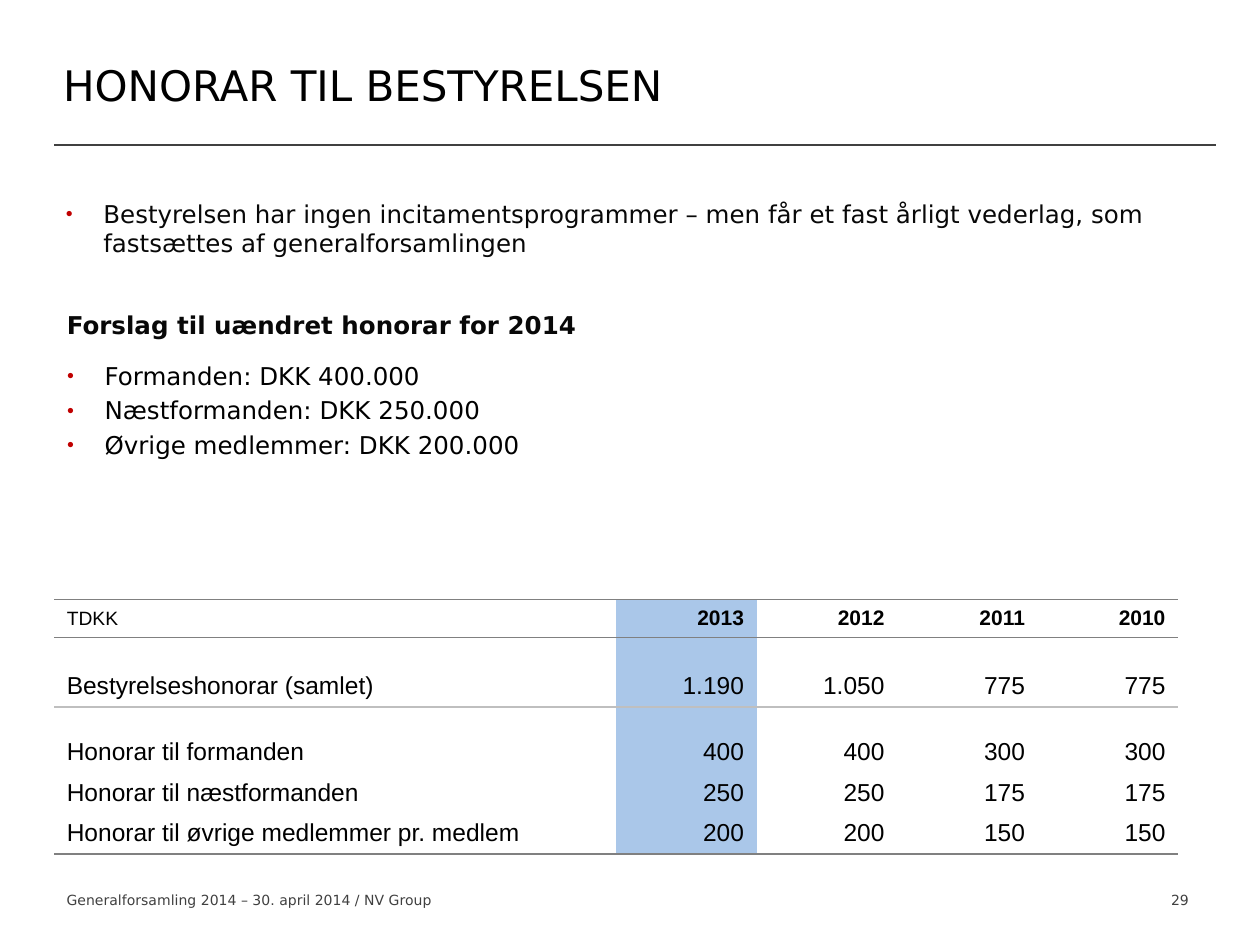
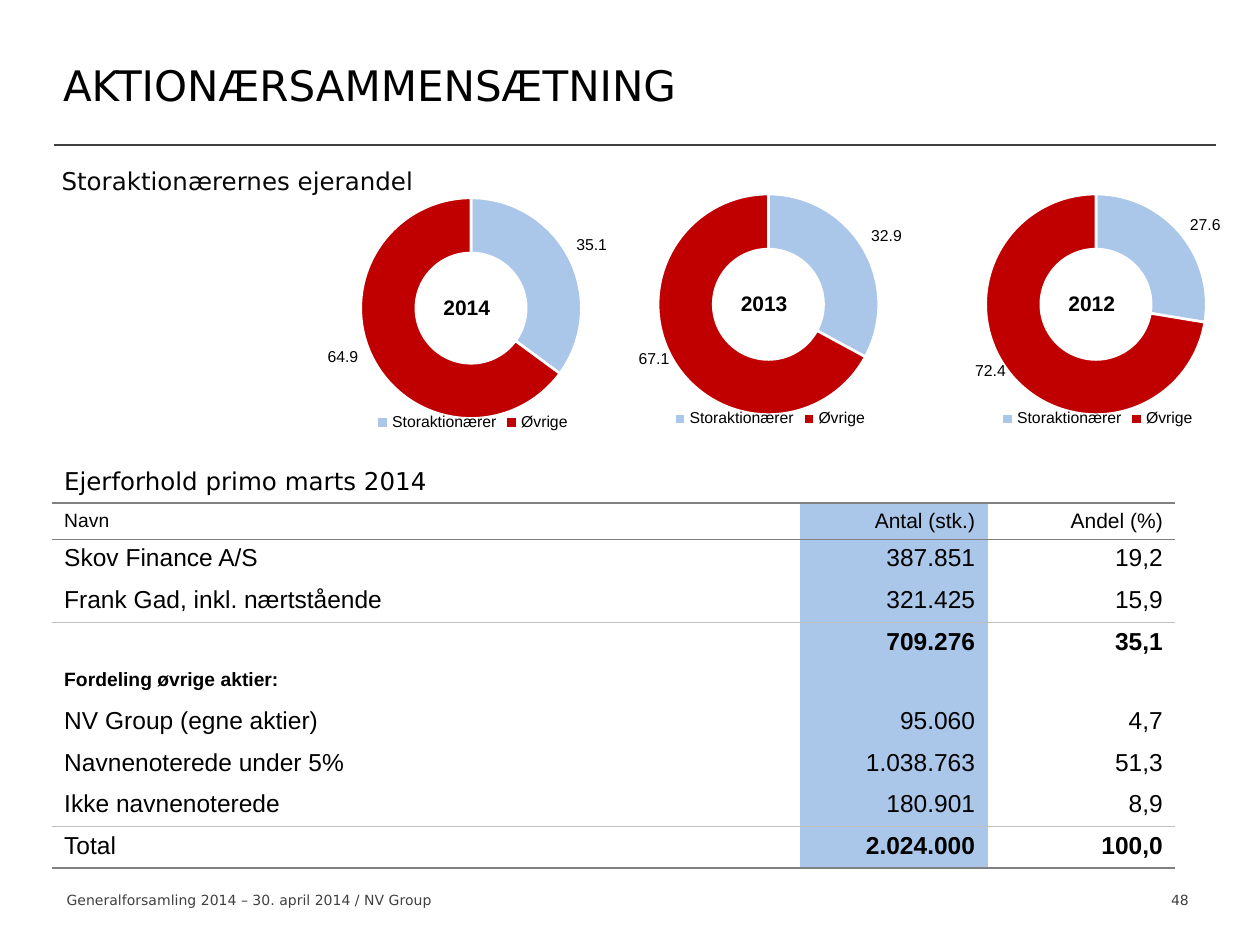
from collections import namedtuple
from math import cos, pi, sin

from lxml import etree
from pptx import Presentation
from pptx.chart.data import CategoryChartData
from pptx.dml.color import RGBColor
from pptx.enum.chart import XL_CHART_TYPE, XL_LEGEND_POSITION
from pptx.enum.shapes import MSO_CONNECTOR
from pptx.enum.text import MSO_ANCHOR, MSO_AUTO_SIZE, PP_ALIGN
from pptx.oxml.ns import qn
from pptx.util import Inches, Pt

DOUGHNUT = XL_CHART_TYPE.DOUGHNUT
LEGEND_BOTTOM = XL_LEGEND_POSITION.BOTTOM
STRAIGHT = MSO_CONNECTOR.STRAIGHT
TOP, MIDDLE = MSO_ANCHOR.TOP, MSO_ANCHOR.MIDDLE
NO_FIT = MSO_AUTO_SIZE.NONE
LEFT, CENTER, RIGHT = PP_ALIGN.LEFT, PP_ALIGN.CENTER, PP_ALIGN.RIGHT

BLACK, INK, GREY, WHITE = "000000", "080808", "404040", "FFFFFF"
RED, BLUE, RULE, SOFT_RULE = "C00000", "AAC7E9", "808080", "BFBFBF"
HEAD_FONT, DATA_FONT = "DejaVu Sans", "Arial"
PLAIN_TABLE = "{2D5ABB26-0587-4C30-8999-92F81FD0307C}"
LAYOUT_TWO_BODIES, LAYOUT_TITLE = 3, 5

COLUMNS, ROWS = 100, 75
CELL_PAD = 0.43
CHART_W, CHART_H = 31.5, 23.4
RING = dict(x=0.22, y=0.055, w=0.556, h=0.75)
RING_RADIUS = 6.6

Row = namedtuple("Row", "height texts label values", defaults=[(14, False), (14, False)])


def grid(units):
    return Inches(units / 10)


def area(*units):
    return [grid(u) for u in units]


def rgb(value):
    return RGBColor.from_string(value)


def style(font, size, color=BLACK, name=HEAD_FONT, bold=False):
    font.size, font.name, font.bold = Pt(size), name, bold
    font.color.rgb = rgb(color)


def write(p, text, align=LEFT, before=0, **font):
    p.alignment = align
    p.space_before = Pt(before)
    r = p.add_run()
    r.text = text
    style(r.font, **font)


def add_label(s, text, at, wrap=True, **format):
    tf = s.shapes.add_textbox(*area(*at)).text_frame
    tf.word_wrap = wrap
    write(tf.paragraphs[0], text, **format)


def set_bullet(p, shown):
    pPr = p._p.get_or_add_pPr()
    indent = grid(3)
    pPr.set("marL", str(indent))
    pPr.set("indent", str(-indent))
    if not shown:
        etree.SubElement(pPr, qn("a:buNone"))
        return
    color = etree.SubElement(pPr, qn("a:buClr"))
    etree.SubElement(color, qn("a:srgbClr"), val=RED)
    etree.SubElement(pPr, qn("a:buSzPct"), val="50000")
    etree.SubElement(pPr, qn("a:buChar"), char="●")


def place(sp, at):
    sp.left, sp.top, sp.width, sp.height = area(*at)
    sp.text_frame.auto_size = NO_FIT
    return sp.text_frame


def fill_body(sp, at, items):
    tf = place(sp, at)
    tf.vertical_anchor = TOP
    for i, (text, bullet, format) in enumerate(items):
        p = tf.add_paragraph() if i else tf.paragraphs[0]
        set_bullet(p, bullet)
        write(p, text, size=14, **format)


def add_slide(prs, layout, title, number):
    s = prs.slides.add_slide(prs.slide_layouts[layout])
    tf = place(s.shapes.title, (4, 1.5, 95, 10.4))
    tf.vertical_anchor = MIDDLE
    write(tf.paragraphs[0], title, size=24)
    line = s.shapes.add_connector(STRAIGHT, *area(4.3, 11.5, 96.5, 11.5))
    line.line.color.rgb = rgb(GREY)
    line.line.width = Pt(1.25)
    etree.SubElement(line._element.spPr, qn("a:effectLst"))
    add_label(s, "Generalforsamling 2014 – 30. april 2014 / NV Group",
              (4.3, 70.3, 40.2, 2.4), size=8, color=GREY)
    add_label(s, str(number), (89.5, 70.3, 8.3, 2.3), align=CENTER, size=8, color=GREY)
    return s


def add_border(cell, side, color):
    ln = etree.Element(qn(f"a:{side}"), w=str(Pt(1)))
    if color:
        fill = etree.SubElement(ln, qn("a:solidFill"))
        etree.SubElement(fill, qn("a:srgbClr"), val=color)
    else:
        etree.SubElement(ln, qn("a:noFill"))
    cell._tc.get_or_add_tcPr().insert(0, ln)


def fill_cell(cell, text, header, align, size, bold):
    cell.vertical_anchor = MIDDLE if header else TOP
    cell.margin_top = cell.margin_bottom = grid(CELL_PAD)
    p = cell.text_frame.paragraphs[0]
    if text:
        write(p, text, align=align, size=size, bold=bold, name=DATA_FONT)
    else:
        etree.SubElement(p._p, qn("a:endParaRPr"), sz="600")


def add_table(s, left, top, widths, rows, rules):
    size = sum(widths), sum(row.height for row in rows)
    tbl = s.shapes.add_table(len(rows), len(widths), *area(left, top, *size)).table
    tbl.first_row = tbl.horz_banding = False
    tbl._tbl.tblPr.find(qn("a:tableStyleId")).text = PLAIN_TABLE
    for column, width in zip(tbl.columns, widths):
        column.width = grid(width)
    for i, row in enumerate(rows):
        tbl.rows[i].height = grid(row.height)
        for j in range(len(widths)):
            cell = tbl.cell(i, j)
            text = row.texts[j] if j < len(row.texts) else ""
            size, bold = row.values if j else row.label
            fill_cell(cell, text, i == 0, RIGHT if j else LEFT, size, bold)
            if j == 1:
                cell.fill.solid()
                cell.fill.fore_color.rgb = rgb(BLUE)
            else:
                cell.fill.background()
            for side, edge in (("lnB", i + 1), ("lnT", i)):
                add_border(cell, side, rules.get(edge))


def set_layout(parent, index, edge=True, inner=False, **shares):
    for old in parent.findall(qn("c:layout")):
        parent.remove(old)
    layout = etree.Element(qn("c:layout"))
    manual = etree.SubElement(layout, qn("c:manualLayout"))
    if inner:
        etree.SubElement(manual, qn("c:layoutTarget"), val="inner")
    if edge:
        for key in "xy":
            etree.SubElement(manual, qn(f"c:{key}Mode"), val="edge")
    for key, share in shares.items():
        etree.SubElement(manual, qn(f"c:{key}"), val=f"{share:.4f}")
    parent.insert(index, layout)


def move_labels(series, values, spots):
    angles = pi * values[0] / 100, pi * (1 + values[0] / 100)
    for dLbl, angle, (x, y) in zip(series.data_labels._element.findall(qn("c:dLbl")), angles, spots):
        set_layout(dLbl, 1, edge=False,
                   x=(x - RING_RADIUS * sin(angle)) / CHART_W,
                   y=(y + RING_RADIUS * cos(angle)) / CHART_H)


def add_ring(s, year, left, top, values, spots):
    data = CategoryChartData()
    data.categories = ["Storaktionærer", "Øvrige"]
    data.add_series("Series 1", values)
    chart = s.shapes.add_chart(DOUGHNUT, *area(left, top, CHART_W, CHART_H), data).chart
    style(chart.font, 18, name="Calibri")
    chart.has_title = False
    chart.has_legend = True
    legend = chart.legend
    legend.position = LEGEND_BOTTOM
    legend.include_in_layout = False
    style(legend.font, 9, name=DATA_FONT)
    set_layout(legend._element, 1, x=0.25, y=0.77)

    space = chart._chartSpace
    background = etree.Element(qn("c:spPr"))
    etree.SubElement(background, qn("a:noFill"))
    space.find(qn("c:chart")).addnext(background)
    set_layout(next(space.iter(qn("c:plotArea"))), 0, inner=True, **RING)
    next(space.iter(qn("c:holeSize"))).set("val", "60")

    series = chart.plots[0].series[0]
    labels = series.data_labels
    labels.show_value = True
    style(labels.font, 9, name=DATA_FONT)
    for i, color in enumerate((BLUE, RED)):
        point = series.points[i]
        point.format.fill.solid()
        point.format.fill.fore_color.rgb = rgb(color)
        point.format.line.color.rgb = rgb(WHITE)
        point.format.line.width = Pt(1.5)
        style(point.data_label.font, 9, name=DATA_FONT)
    for leader in space.iter(qn("c:showLeaderLines")):
        leader.set("val", "0")
    move_labels(series, values, spots)
    add_label(s, year, (left + 12.5, top + 8.5, 5.7, 3), wrap=False,
              align=CENTER, size=12, name=DATA_FONT, bold=True)


def fee_slide(prs):
    s = add_slide(prs, LAYOUT_TWO_BODIES, "HONORAR TIL BESTYRELSEN", 29)
    policy, proposal = list(s.placeholders)[1:]
    fill_body(policy, (4.2, 15.3, 92.5, 8), [
        ("Bestyrelsen har ingen incitamentsprogrammer – men får et fast årligt vederlag, "
         "som fastsættes af generalforsamlingen", True, dict(color=INK))])
    fill_body(proposal, (4.3, 24.1, 92.5, 16.5), [
        ("Forslag til uændret honorar for 2014", False, dict(color=INK, bold=True)),
        ("Formanden: DKK 400.000", True, dict(before=12.3)),
        ("Næstformanden: DKK 250.000", True, dict(before=2.8)),
        ("Øvrige medlemmer: DKK 200.000", True, dict(before=2.8))])
    rows = [
        Row(3, ["TDKK", "2013", "2012", "2011", "2010"], (11, False), (12, True)),
        Row(2.3, []),
        Row(3.2, ["Bestyrelseshonorar (samlet)", "1.190", "1.050", "775", "775"]),
        Row(2.1, []),
        Row(3.2, ["Honorar til formanden", "400", "400", "300", "300"]),
        Row(3.2, ["Honorar til næstformanden", "250", "250", "175", "175"]),
        Row(3.2, ["Honorar til øvrige medlemmer pr. medlem", "200", "200", "150", "150"])]
    add_table(s, 4.3, 47.6, [44.6] + [11.15] * 4, rows,
              {0: RULE, 1: RULE, 3: SOFT_RULE, 7: RULE})


def owner_slide(prs):
    s = add_slide(prs, LAYOUT_TITLE, "AKTIONÆRSAMMENSÆTNING", 48)
    add_label(s, "Storaktionærernes ejerandel", (3.9, 12.7, 50.9, 3.4), size=14, color=INK)
    add_label(s, "Ejerforhold primo marts 2014", (4.1, 36.5, 50.9, 3.4), size=14)
    rings = [
        ("2014", 21.7, 14.4, (35.1, 64.9), ((9.6, -5), (-10.2, 3.9))),
        ("2013", 45.3, 14.1, (32.9, 67.1), ((9.4, -5.4), (-9.1, 4.4))),
        ("2012", 71.3, 14.1, (27.6, 72.4), ((8.7, -6.3), (-8.4, 5.3)))]
    for ring in rings:
        add_ring(s, *ring)
    rows = [
        Row(2.9, ["Navn", "Antal (stk.)", "Andel (%)"], (11, False), (12, False)),
        Row(3.3, ["Skov Finance A/S", "387.851", "19,2"]),
        Row(3.3, ["Frank Gad, inkl. nærtstående", "321.425", "15,9"]),
        Row(3.3, ["", "709.276", "35,1"], values=(14, True)),
        Row(3, ["Fordeling øvrige aktier:"], label=(11, True)),
        Row(3.3, ["NV Group (egne aktier)", "95.060", "4,7"]),
        Row(3.3, ["Navnenoterede under 5%", "1.038.763", "51,3"]),
        Row(3.3, ["Ikke navnenoterede", "180.901", "8,9"]),
        Row(3.3, ["Total", "2.024.000", "100,0"], values=(14, True))]
    add_table(s, 4.1, 39.9, [59.4, 14.9, 14.9], rows,
              {0: RULE, 1: RULE, 3: SOFT_RULE, 8: SOFT_RULE, 9: RULE})


def main():
    prs = Presentation()
    prs.slide_width, prs.slide_height = grid(COLUMNS), grid(ROWS)
    fee_slide(prs)
    owner_slide(prs)
    prs.save("out.pptx")


if __name__ == "__main__":
    main()
